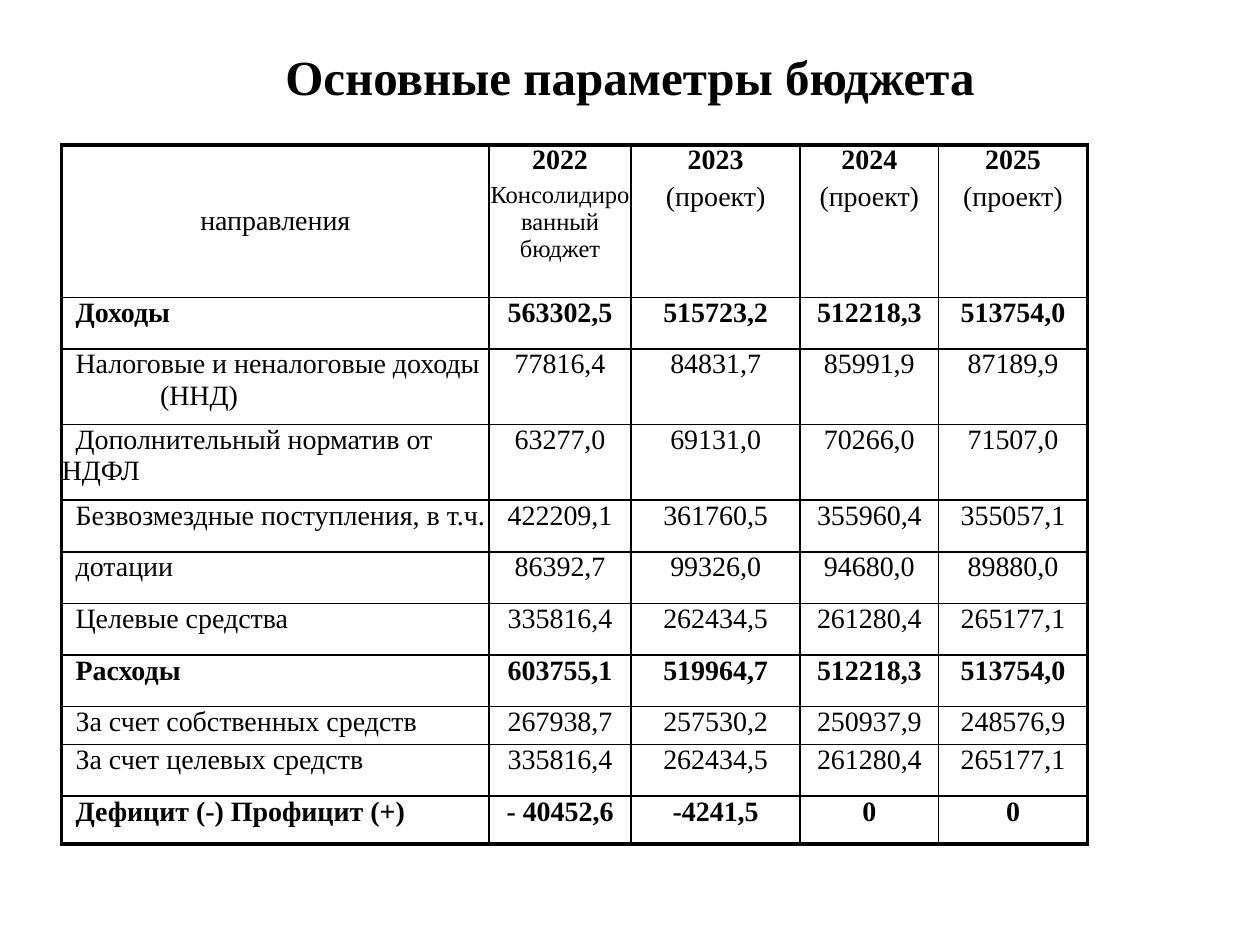
from dataclasses import dataclass

from lxml import etree
from pptx import Presentation
from pptx.dml.color import RGBColor
from pptx.enum.text import MSO_ANCHOR, PP_ALIGN
from pptx.oxml.ns import qn
from pptx.util import Inches, Pt

LEFT, CENTER = PP_ALIGN.LEFT, PP_ALIGN.CENTER
TOP, MIDDLE = MSO_ANCHOR.TOP, MSO_ANCHOR.MIDDLE
NO_MARGINS = dict.fromkeys(
    ("margin_left", "margin_top", "margin_right", "margin_bottom"), 0)


@dataclass(frozen=True)
class Theme:
    font: str = "Times New Roman"
    ink: str = "000000"
    title: float = 28
    body: float = 16
    note: float = 14
    gap: float = 3.2
    thin: float = 1
    thick: float = 2.25


@dataclass
class Para:
    text: str
    bold: bool = False
    size: float = Theme.body
    align: PP_ALIGN = CENTER
    indent: float = 0
    gap: float = Theme.gap


def set_attrs(obj, values):
    for name, value in values.items():
        setattr(obj, name, value)


class SlideBuilder:
    def __init__(self, slide, theme):
        self.s, self.theme = slide, theme

    def fill_text(self, tf, paras):
        for i, para in enumerate(paras):
            p = tf.add_paragraph() if i else tf.paragraphs[0]
            set_attrs(p, {"alignment": para.align,
                          "space_before": Pt(para.gap if i else 0)})
            if para.indent:
                p._p.get_or_add_pPr().set("indent", str(Inches(para.indent)))
            r = p.add_run()
            r.text = para.text
            set_attrs(r.font, {"name": self.theme.font, "size": Pt(para.size),
                               "bold": para.bold})
            r.font.color.rgb = RGBColor.from_string(self.theme.ink)

    def text(self, box, paras):
        tf = self.s.shapes.add_textbox(*map(Inches, box)).text_frame
        set_attrs(tf, {"word_wrap": True, "vertical_anchor": MIDDLE})
        self.fill_text(tf, paras)

    def border(self, cell, widths):
        tc_pr = cell._tc.get_or_add_tcPr()
        for i, (side, width) in enumerate(widths.items()):
            ln = etree.Element(qn(f"a:ln{side}"), w=str(Pt(width)))
            fill = etree.SubElement(ln, qn("a:solidFill"))
            etree.SubElement(fill, qn("a:srgbClr"), val=self.theme.ink)
            tc_pr.insert(i, ln)

    def table(self, left, top, col_widths, row_heights, cells):
        n_rows, n_cols = len(row_heights), len(col_widths)
        size = (sum(col_widths), sum(row_heights))
        table = self.s.shapes.add_table(
            n_rows, n_cols, *map(Inches, (left, top, *size))).table
        set_attrs(table, {"first_row": False, "horz_banding": False})
        for col, width in zip(table.columns, col_widths):
            col.width = Inches(width)
        for row, height in zip(table.rows, row_heights):
            row.height = Inches(height)

        for y, row in enumerate(cells):
            for x, paras in enumerate(row):
                cell = table.cell(y, x)
                anchor = MIDDLE if x == y == 0 else TOP
                set_attrs(cell, {**NO_MARGINS, "vertical_anchor": anchor})
                cell.fill.background()
                self.fill_text(cell.text_frame, paras)
                # Thick frame outside, thin rules inside
                outer = {"L": x == 0, "R": x == n_cols - 1,
                         "T": y == 0, "B": y == n_rows - 1}
                self.border(cell, {
                    side: self.theme.thick if edge else self.theme.thin
                    for side, edge in outer.items()})


# Header: year and note
YEARS = [("2022", "Консолидированный бюджет", Theme.note),
         ("2023", "(проект)", Theme.body),
         ("2024", "(проект)", Theme.body),
         ("2025", "(проект)", Theme.body)]

# Budget lines: label, values by year
LINES = [
    ("Доходы", "563302,5", "515723,2", "512218,3", "513754,0"),
    ("Налоговые и неналоговые доходы",
     "77816,4", "84831,7", "85991,9", "87189,9"),
    ("Дополнительный норматив от НДФЛ",
     "63277,0", "69131,0", "70266,0", "71507,0"),
    ("Безвозмездные поступления, в т.ч.",
     "422209,1", "361760,5", "355960,4", "355057,1"),
    ("дотации", "86392,7", "99326,0", "94680,0", "89880,0"),
    ("Целевые средства", "335816,4", "262434,5", "261280,4", "265177,1"),
    ("Расходы", "603755,1", "519964,7", "512218,3", "513754,0"),
    ("За счет собственных средств",
     "267938,7", "257530,2", "250937,9", "248576,9"),
    ("За счет целевых средств",
     "335816,4", "262434,5", "261280,4", "265177,1"),
    ("Дефицит (-) Профицит (+)", "- 40452,6", "-4241,5", "0", "0"),
]
TOTALS = {"Доходы", "Расходы", "Дефицит (-) Профицит (+)"}
SECOND_LINES = {"Налоговые и неналоговые доходы": "(ННД)"}
COL_WIDTHS = [3.39, 1.13, 1.34, 1.1, 1.18]
ROW_HEIGHTS = [1.21, 0.41, 0.6, 0.6, 0.41, 0.41, 0.41, 0.41, 0.3, 0.41, 0.38]


def budget_row(label, *values):
    bold = label in TOTALS
    head = [Para(label, bold, align=LEFT, indent=0.11)]
    if label in SECOND_LINES:
        head.append(Para(SECOND_LINES[label], align=LEFT, indent=0.78, gap=0))
    return [head] + [[Para(value, bold)] for value in values]


def main():
    prs = Presentation()
    set_attrs(prs, {"slide_width": Inches(10), "slide_height": Inches(7.5)})
    theme = Theme()
    slide = SlideBuilder(prs.slides.add_slide(prs.slide_layouts[6]), theme)

    # Title
    slide.text((0.5, 0.3, 9, 0.61),
               [Para("Основные параметры бюджета", True, theme.title)])

    # Budget table
    header = [[Para("направления")]] + [
        [Para(year, True), Para(note, size=size)] for year, note, size in YEARS]
    slide.table(0.49, 1.15, COL_WIDTHS, ROW_HEIGHTS,
                [header] + [budget_row(*line) for line in LINES])

    prs.save("out.pptx")


if __name__ == "__main__":
    main()
